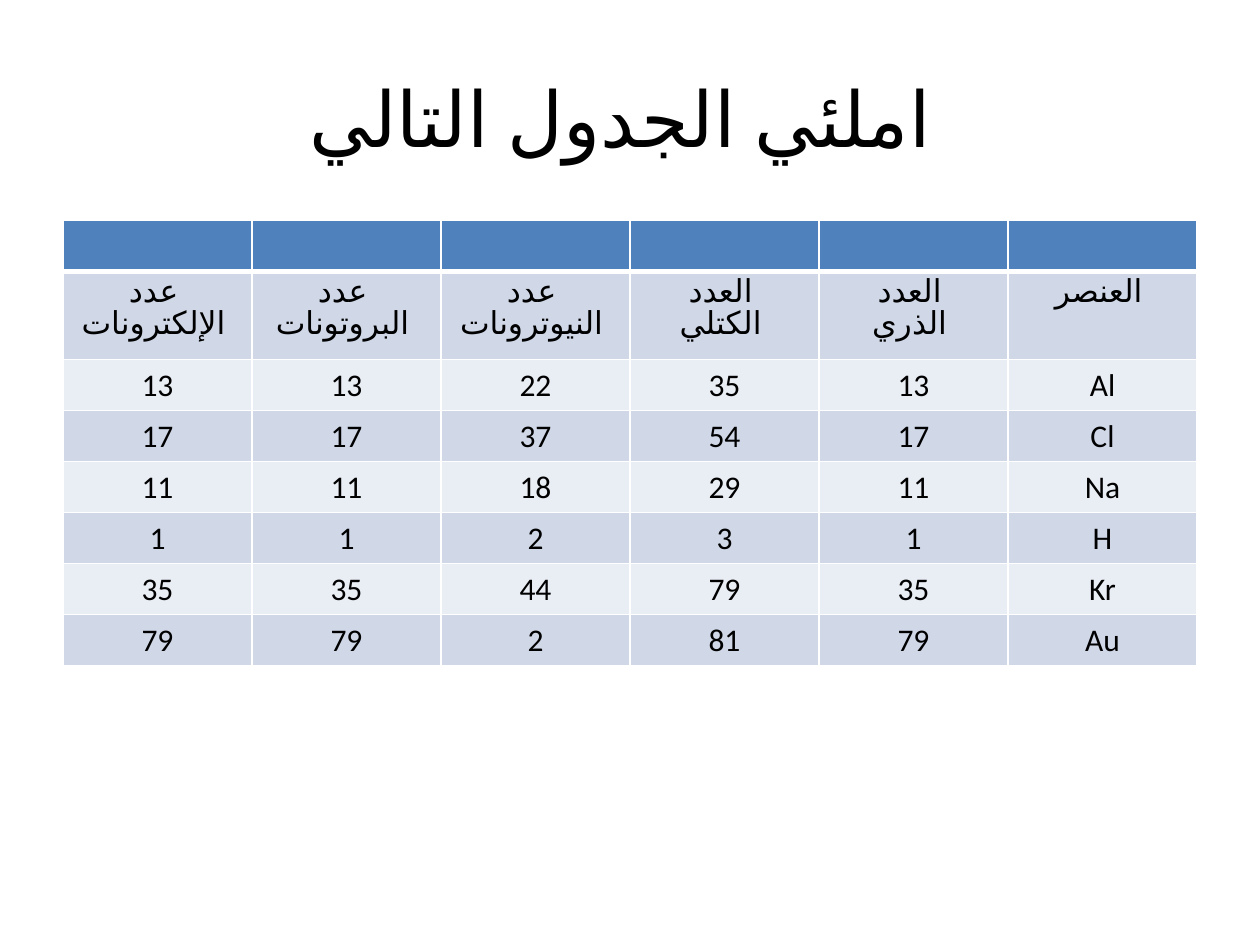
from dataclasses import dataclass

from lxml.etree import SubElement as Sub
from pptx import Presentation
from pptx.dml.color import RGBColor as RGB
from pptx.enum.lang import MSO_LANGUAGE_ID as Lang
from pptx.enum.text import MSO_ANCHOR as Anchor, PP_ALIGN as Align
from pptx.oxml.ns import qn
from pptx.util import Inches, Pt


@dataclass(frozen=True)
class Theme:
    font: str = "Calibri"
    ink: str = "000000"
    head: str = "4F81BD"
    bands: tuple = ("D0D8E8", "E9EDF4")
    rule: str = "FFFFFF"
    title: int = 44
    body: int = 18
    thin: int = 1
    thick: int = 3


THEME = Theme()

TITLE = "املئي الجدول التالي "
LABELS = ["عدد \nالإلكترونات ", "عدد \nالبروتونات ", "عدد \nالنيوترونات ",
          "العدد \nالكتلي ", "العدد \nالذري ", "العنصر "]
# Electrons, protons, neutrons, mass number, atomic number, element
ATOMS = [
    [13, 13, 22, 35, 13, "Al"],
    [17, 17, 37, 54, 17, "Cl"],
    [11, 11, 18, 29, 11, "Na"],
    [1, 1, 2, 3, 1, "H"],
    [35, 35, 44, 79, 35, "Kr"],
    [79, 79, 2, 81, 79, "Au"],
]


def write(frame, text, size):
    """Fill a text frame with one centred paragraph per line."""
    for i, line in enumerate(text.split("\n")):
        para = frame.paragraphs[0] if i == 0 else frame.add_paragraph()
        para.alignment = Align.CENTER
        if line:
            run = para.add_run()
            run.text = line
            run.font.name = THEME.font
            run.font.size = Pt(size)
            run.font.color.rgb = RGB.from_string(THEME.ink)
            # Arabic runs need their language for the right letter shapes
            if not line.isascii():
                run.font.language_id = Lang.ARABIC


def add_title(slide):
    box = slide.shapes.add_textbox(
        Inches(0.5), Inches(0.3), Inches(9), Inches(1.25))
    frame = box.text_frame
    frame.word_wrap = True
    frame.vertical_anchor = Anchor.MIDDLE
    write(frame, TITLE, THEME.title)


def edge(cell, side, width):
    """Draw one border of a cell."""
    line = Sub(cell._tc.get_or_add_tcPr(), qn(f"a:ln{side}"), w=str(Pt(width)))
    fill = Sub(line, qn("a:solidFill"))
    Sub(fill, qn("a:srgbClr"), val=THEME.rule)


def style(cell, row):
    # The rule under the header row is thicker than the rest
    widths = {"L": THEME.thin, "R": THEME.thin,
              "T": THEME.thick if row == 1 else THEME.thin,
              "B": THEME.thick if row == 0 else THEME.thin}
    for side, width in widths.items():
        edge(cell, side, width)
    color = THEME.head if row == 0 else THEME.bands[(row - 1) % 2]
    cell.fill.solid()
    cell.fill.fore_color.rgb = RGB.from_string(color)


def add_grid(slide):
    rows = [[""] * len(LABELS), LABELS, *ATOMS]
    tall = Inches(3.24)
    table = slide.shapes.add_table(
        len(rows), len(LABELS), Inches(0.5), Inches(1.75),
        Inches(9), tall).table
    for r, row in enumerate(rows):
        table.rows[r].height = tall // len(rows)
        for c, value in enumerate(row):
            cell = table.cell(r, c)
            style(cell, r)
            write(cell.text_frame, str(value), THEME.body)


def main():
    deck = Presentation()
    deck.slide_width, deck.slide_height = Inches(10), Inches(7.5)
    slide = deck.slides.add_slide(deck.slide_layouts[6])
    add_title(slide)
    add_grid(slide)
    deck.save("out.pptx")


if __name__ == "__main__":
    main()
